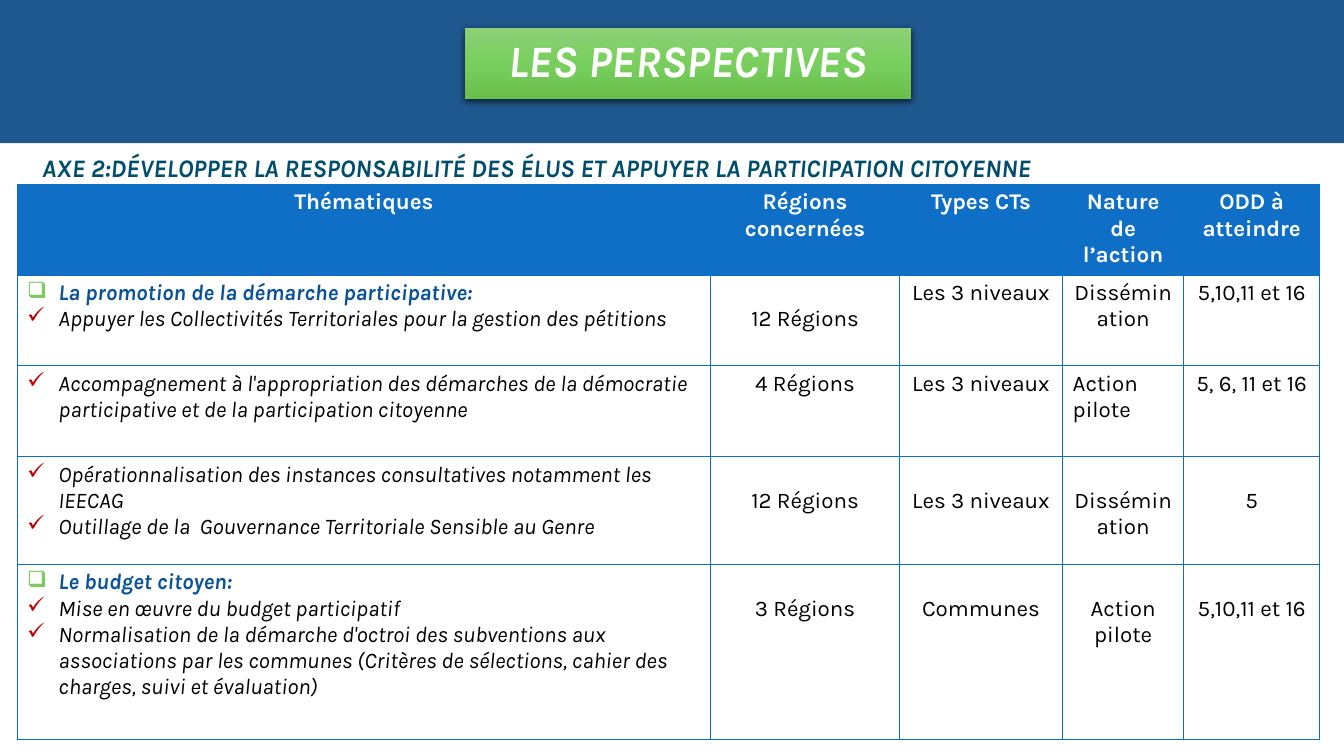
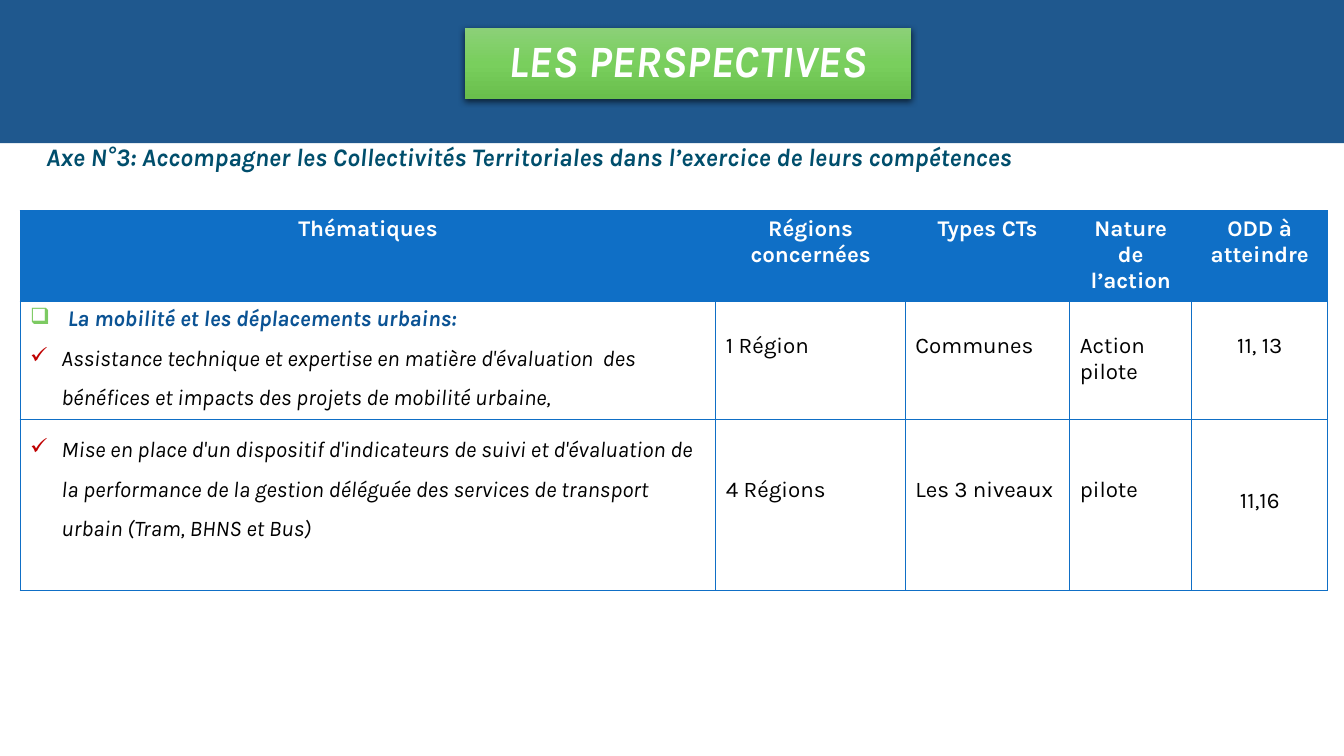
from lxml import etree
from pptx import Presentation
from pptx.dml.color import RGBColor
from pptx.enum.shapes import MSO_SHAPE as Shape
from pptx.enum.text import MSO_ANCHOR as Anchor, PP_ALIGN as Align
from pptx.oxml import parse_xml
from pptx.oxml.ns import nsdecls, qn
from pptx.util import Inches, Pt

FONT = "Karla"
WHITE = RGBColor(0xFF, 0xFF, 0xFF)
BLACK = RGBColor(0x00, 0x00, 0x00)
BAND = RGBColor(0x1F, 0x58, 0x8E)
BLUE = RGBColor(0x0F, 0x6F, 0xC6)
TOPIC = RGBColor(0x0B, 0x53, 0x94)
TEAL = RGBColor(0x00, 0x4E, 0x6C)
GREEN = RGBColor(0x7C, 0xCA, 0x62)
RED = RGBColor(0xC0, 0x00, 0x00)
SHADES = [(0, "8BD077"), (50, "79CF5D"), (100, "69BE4C")]

LINE = 0.26  # height of one 16 pt line, in inches
PAD = 0.05
LEFT, MID = Align.LEFT, Align.CENTER

TITLE = "LES PERSPECTIVES"
HEADS = ["Thématiques", "Régions concernées", "Types CTs",
         "Nature de l’action", "ODD à atteindre"]

# A row: height, topic or None, checked items, then the other cells
# as (text, lines to drop, alignment).
PAGES = [
    {
        "axis": "AXE 2:DÉVELOPPER LA RESPONSABILITÉ DES ÉLUS ET APPUYER "
                "LA PARTICIPATION CITOYENNE",
        "axis_at": (0.32, 1.46, 12.44, 0.4),
        "grid_at": (0.17, 1.83),
        "cols": [6.88, 1.87, 1.62, 1.2, 1.35],
        "indent": 0.31,
        "spacing": 1.0,
        "rows": [
            (0.9, "La promotion de la démarche participative:",
             ["Appuyer les Collectivités Territoriales pour la gestion des pétitions"],
             [("12 Régions", 1, MID), ("Les 3 niveaux", 0, MID),
              ("Dissémination", 0, MID), ("5,10,11 et 16", 0, MID)]),
            (0.9, None,
             ["Accompagnement à l'appropriation des démarches de la démocratie "
              "participative et de la participation citoyenne"],
             [("4 Régions", 0, MID), ("Les 3 niveaux", 0, MID),
              ("Action pilote", 0, LEFT), ("5, 6, 11 et 16", 0, MID)]),
            (1.07, None,
             ["Opérationnalisation des instances consultatives notamment les IEECAG",
              "Outillage de la  Gouvernance Territoriale Sensible au Genre"],
             [("12 Régions", 1, MID), ("Les 3 niveaux", 1, MID),
              ("Dissémination", 1, MID), ("5", 1, MID)]),
            (1.74, "Le budget citoyen:",
             ["Mise en œuvre du budget participatif",
              "Normalisation de la démarche d'octroi des subventions aux "
              "associations par les communes (Critères de sélections, cahier "
              "des charges, suivi et évaluation)"],
             [("3 Régions", 1, MID), ("Communes", 1, MID),
              ("Action pilote", 1, MID), ("5,10,11 et 16", 1, MID)]),
        ],
    },
    {
        "axis": "Axe N°3: Accompagner les Collectivités Territoriales dans "
                "l’exercice de leurs compétences",
        "axis_at": (0.36, 1.35, 12.9, 0.4),
        "grid_at": (0.2, 2.09),
        "cols": [6.9, 1.88, 1.63, 1.21, 1.35],
        "indent": 0.37,
        "spacing": 1.5,
        "rows": [
            (1.17, "La mobilité et les déplacements urbains:",
             ["Assistance technique et expertise en matière d'évaluation  des "
              "bénéfices et impacts des projets de mobilité urbaine,"],
             [("1 Région", 1, LEFT), ("Communes", 1, LEFT),
              ("Action pilote", 1, LEFT), ("11, 13", 1, MID)]),
            (1.7, None,
             ["Mise en place d'un dispositif d'indicateurs de suivi et "
              "d'évaluation de la performance de la gestion déléguée des "
              "services de transport urbain (Tram, BHNS et Bus)"],
             [("4 Régions", 2, LEFT), ("Les 3 niveaux", 2, LEFT),
              ("pilote", 2, LEFT), ("11,16", 2.44, MID)]),
        ],
    },
]


def write(para, text, size, color, bold=False, italic=False):
    run = para.add_run()
    run.text = text
    font = run.font
    font.name, font.size = FONT, Pt(size)
    font.bold, font.italic = bold, italic
    font.color.rgb = color


def mark(para, sign, color, indent):
    """Give a paragraph a coloured bullet and a hanging indent."""
    props = para._p.get_or_add_pPr()
    props.set("marL", str(Inches(indent)))
    props.set("indent", str(-Inches(indent)))
    tint = etree.SubElement(props, qn("a:buClr"))
    etree.SubElement(tint, qn("a:srgbClr")).set("val", str(color))
    etree.SubElement(props, qn("a:buChar")).set("char", sign)


def edge(cell):
    """Draw the four borders of a cell."""
    props = cell._tc.get_or_add_tcPr()
    for side in "LRTB":
        line = etree.SubElement(props, qn(f"a:ln{side}"), w=str(Pt(1)))
        fill = etree.SubElement(line, qn("a:solidFill"))
        etree.SubElement(fill, qn("a:srgbClr")).set("val", str(BLUE))


def add_band(slide, width):
    band = slide.shapes.add_shape(Shape.RECTANGLE, 0, 0, width, Inches(1.42))
    band.shadow.inherit = False
    band.fill.solid()
    band.fill.fore_color.rgb = BAND
    band.line.fill.background()


def add_title(slide):
    box = slide.shapes.add_shape(Shape.SNIP_2_DIAG_RECTANGLE, Inches(4.61),
                                 Inches(0.28), Inches(4.43), Inches(0.7))
    box.adjustments[0] = box.adjustments[1] = 0
    box.line.fill.background()
    stops = "".join(f'<a:gs pos="{pos * 1000}"><a:srgbClr val="{tint}"/></a:gs>'
                    for pos, tint in SHADES)
    props = box._element.spPr
    props.find(qn("a:prstGeom")).addnext(parse_xml(
        f'<a:gradFill {nsdecls("a")} rotWithShape="1"><a:gsLst>{stops}</a:gsLst>'
        '<a:lin ang="5400000" scaled="0"/></a:gradFill>'))
    props.append(parse_xml(
        f'<a:effectLst {nsdecls("a")}><a:outerShdw blurRad="{Pt(4.5)}" '
        f'dist="{Pt(1.5)}" dir="5400000" algn="ctr" rotWithShape="0">'
        '<a:srgbClr val="000000"><a:alpha val="63000"/></a:srgbClr>'
        '</a:outerShdw></a:effectLst>'))
    frame = box.text_frame
    frame.vertical_anchor = Anchor.MIDDLE
    para = frame.paragraphs[0]
    para.alignment, para.line_spacing = MID, 0.9
    write(para, TITLE, 32, WHITE, True, True)


def add_axis(slide, page):
    box = slide.shapes.add_textbox(*map(Inches, page["axis_at"]))
    box.text_frame.word_wrap = True
    write(box.text_frame.paragraphs[0], page["axis"], 18, TEAL, True, True)


def fill_themes(cell, topic, items, page):
    """Write the topic, if any, and the checked items below it."""
    lines = [(topic, True)] if topic else []
    lines += [(item, False) for item in items]
    frame = cell.text_frame
    for i, (text, is_topic) in enumerate(lines):
        para = frame.add_paragraph() if i else frame.paragraphs[0]
        if is_topic:
            mark(para, "❑", GREEN, page["indent"])
            write(para, text, 16, TOPIC, True, True)
        else:
            mark(para, "✓", RED, 0.31)
            para.line_spacing = page["spacing"]
            write(para, text, 16, BLACK, italic=True)


def add_grid(slide, page):
    cols, rows = page["cols"], page["rows"]
    highs = [0.9] + [row[0] for row in rows]
    left, top = page["grid_at"]
    table = slide.shapes.add_table(
        len(highs), len(cols), Inches(left), Inches(top),
        Inches(sum(cols)), Inches(sum(highs))).table
    table.horz_banding = False
    for col, width in zip(table.columns, cols):
        col.width = Inches(width)
    for row, high in zip(table.rows, highs):
        row.height = Inches(high)
    for cell in table.iter_cells():
        edge(cell)
        cell.fill.background()
    for c, head in enumerate(HEADS):
        cell = table.cell(0, c)
        cell.fill.solid()
        cell.fill.fore_color.rgb = BLUE
        para = cell.text_frame.paragraphs[0]
        para.alignment = MID
        write(para, head, 16, WHITE, True)
    for r, (_, topic, items, facts) in enumerate(rows, 1):
        fill_themes(table.cell(r, 0), topic, items, page)
        for c, (text, drop, align) in enumerate(facts, 1):
            cell = table.cell(r, c)
            cell.margin_top = Inches(PAD + drop * LINE)
            para = cell.text_frame.paragraphs[0]
            para.alignment = align
            write(para, text, 16, BLACK)


def main():
    deck = Presentation()
    deck.slide_width, deck.slide_height = Inches(13.33), Inches(7.5)
    for page in PAGES:
        slide = deck.slides.add_slide(deck.slide_layouts[6])
        add_band(slide, deck.slide_width)
        add_grid(slide, page)
        add_axis(slide, page)
        add_title(slide)
    deck.save("out.pptx")


if __name__ == "__main__":
    main()
